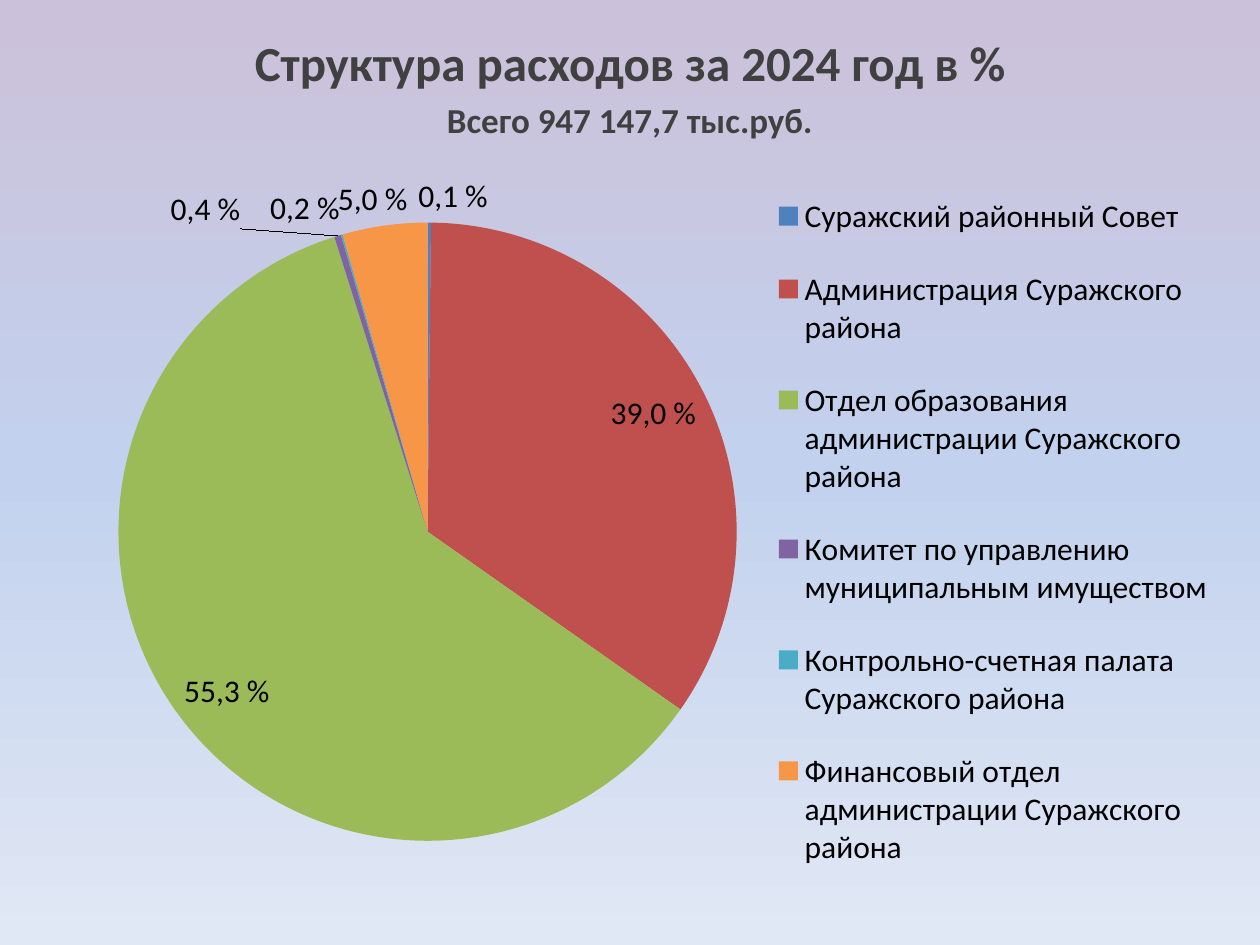
from copy import deepcopy

from pptx import Presentation
from pptx.chart.data import CategoryChartData
from pptx.dml.color import RGBColor
from pptx.enum.chart import XL_CHART_TYPE, XL_LABEL_POSITION, XL_LEGEND_POSITION
from pptx.enum.text import MSO_ANCHOR, PP_ALIGN
from pptx.oxml import parse_xml
from pptx.oxml.ns import nsdecls, qn
from pptx.util import Cm, Pt

PIE = XL_CHART_TYPE.PIE
OUTSIDE = XL_LABEL_POSITION.OUTSIDE_END
INSIDE = XL_LABEL_POSITION.INSIDE_END
RIGHT = XL_LEGEND_POSITION.RIGHT
CENTER = PP_ALIGN.CENTER
TOP = MSO_ANCHOR.TOP

# Name, value, label, colour, label position, label shift (share of chart size)
DEPARTMENTS = [
    ("Суражский районный Совет", 0.2, "0,1 %", "4F81BD", OUTSIDE, (0.02, 0)),
    ("Администрация Суражского района", 39, "39,0 %", "C0504D", INSIDE, None),
    ("Отдел образования администрации Суражского района", 68.1, "55,3 %",
     "9BBB59", INSIDE, None),
    ("Комитет по управлению муниципальным имуществом", 0.4, "0,4 %",
     "8064A2", OUTSIDE, (-0.08, 0)),
    ("Контрольно-счетная палата Суражского района", 0.1, "0,2 %",
     "4BACC6", OUTSIDE, None),
    ("Финансовый отдел администрации Суражского района", 5, "5,0 %",
     "F79646", OUTSIDE, (0.02, 0)),
]


def color(hex_code):
    return RGBColor.from_string(hex_code)


def manual_layout(x, y, size=None, inner=False, edge=True):
    """Chart layout in shares of the chart area."""
    parts = ['<c:layoutTarget val="inner"/>'] if inner else []
    if edge:
        parts += ['<c:xMode val="edge"/>', '<c:yMode val="edge"/>']
    parts += [f'<c:x val="{x}"/>', f'<c:y val="{y}"/>']
    if size:
        parts += [f'<c:w val="{size[0]}"/>', f'<c:h val="{size[1]}"/>']
    return parse_xml(f'<c:layout {nsdecls("c")}><c:manualLayout>'
                     f'{"".join(parts)}</c:manualLayout></c:layout>')


def set_layout(parent, layout, after=None):
    for old in parent.findall(qn("c:layout")):
        parent.remove(old)
    if after is None:
        parent.insert(0, layout)
    else:
        parent.find(qn(after)).addnext(layout)


class SlideBuilder:
    font_name = "Calibri"
    title_color = "404040"
    chart_color = "000000"

    def __init__(self, slide):
        self.slide = slide

    def background(self, stops):
        fill = self.slide.background.fill
        fill.gradient()
        fill.gradient_angle = 270
        stop_list = self.slide.element.find(".//" + qn("a:gsLst"))
        while len(stop_list) < len(stops):
            stop_list.append(deepcopy(stop_list[0]))
        for stop, (position, hex_code) in zip(fill.gradient_stops, stops):
            stop.position = position
            stop.color.rgb = color(hex_code)

    def heading(self, left, top, width, height, lines):
        shape = self.slide.shapes.add_textbox(Cm(left), Cm(top), Cm(width), Cm(height))
        frame = shape.text_frame
        frame.word_wrap = True
        frame.vertical_anchor = TOP
        for index, (text, size) in enumerate(lines):
            paragraph = frame.add_paragraph() if index else frame.paragraphs[0]
            paragraph.text = text
            paragraph.alignment = CENTER
            paragraph.space_before = Pt(size * 0.2)
            paragraph.font.name = self.font_name
            paragraph.font.size = Pt(size)
            paragraph.font.bold = True
            paragraph.font.color.rgb = color(self.title_color)

    def pie(self, left, top, width, height, rows, size):
        data = CategoryChartData()
        data.categories = [row[0] for row in rows]
        data.add_series("Series 1", [row[1] for row in rows])
        chart = self.slide.shapes.add_chart(
            PIE, Cm(left), Cm(top), Cm(width), Cm(height), data).chart
        chart.has_title = False
        chart.font.name = self.font_name
        chart.font.size = Pt(size)
        chart.font.color.rgb = color(self.chart_color)

        # Legend and plot area
        chart.has_legend = True
        chart.legend.position = RIGHT
        chart.legend.include_in_layout = False
        set_layout(chart.legend._element, manual_layout(0.62, 0.01, (0.37, 0.98)),
                   "c:legendPos")
        plot = chart.plots[0]
        plot.vary_by_categories = True
        set_layout(plot._element.getparent(),
                   manual_layout(0.07, 0.09, (0.52, 0.82), inner=True))

        # Slices and their labels
        series = plot.series[0]
        labels = series.data_labels
        labels.show_value = True
        labels.position = OUTSIDE
        for index, (_, _, text, hex_code, position, shift) in enumerate(rows):
            point = series.points[index]
            point.format.fill.solid()
            point.format.fill.fore_color.rgb = color(hex_code)
            label = point.data_label
            paragraph = label.text_frame.paragraphs[0]
            paragraph.text = text
            paragraph.font.size = Pt(size)
            label.position = position
            if shift:
                element = labels._element.find(f'c:dLbl[{index + 1}]', labels._element.nsmap)
                set_layout(element, manual_layout(*shift, edge=False), "c:idx")
        leader = labels._element.find(qn("c:showLeaderLines"))
        if leader is not None:
            leader.set("val", "1")


def main():
    presentation = Presentation()
    presentation.slide_width = Cm(25.4)
    presentation.slide_height = Cm(19.05)
    builder = SlideBuilder(presentation.slides.add_slide(presentation.slide_layouts[6]))

    builder.background([(0, "CCC1DA"), (0.5, "C2D1ED"), (1, "E1E8F5")])
    builder.heading(0.7, 0.53, 24, 2, [
        ("Структура расходов за 2024 год в %", 28),
        ("Всего 947 147,7 тыс.руб.", 20),
    ])
    builder.pie(0.7, 3.12, 24, 15.2, DEPARTMENTS, 18)
    presentation.save("out.pptx")


if __name__ == "__main__":
    main()
